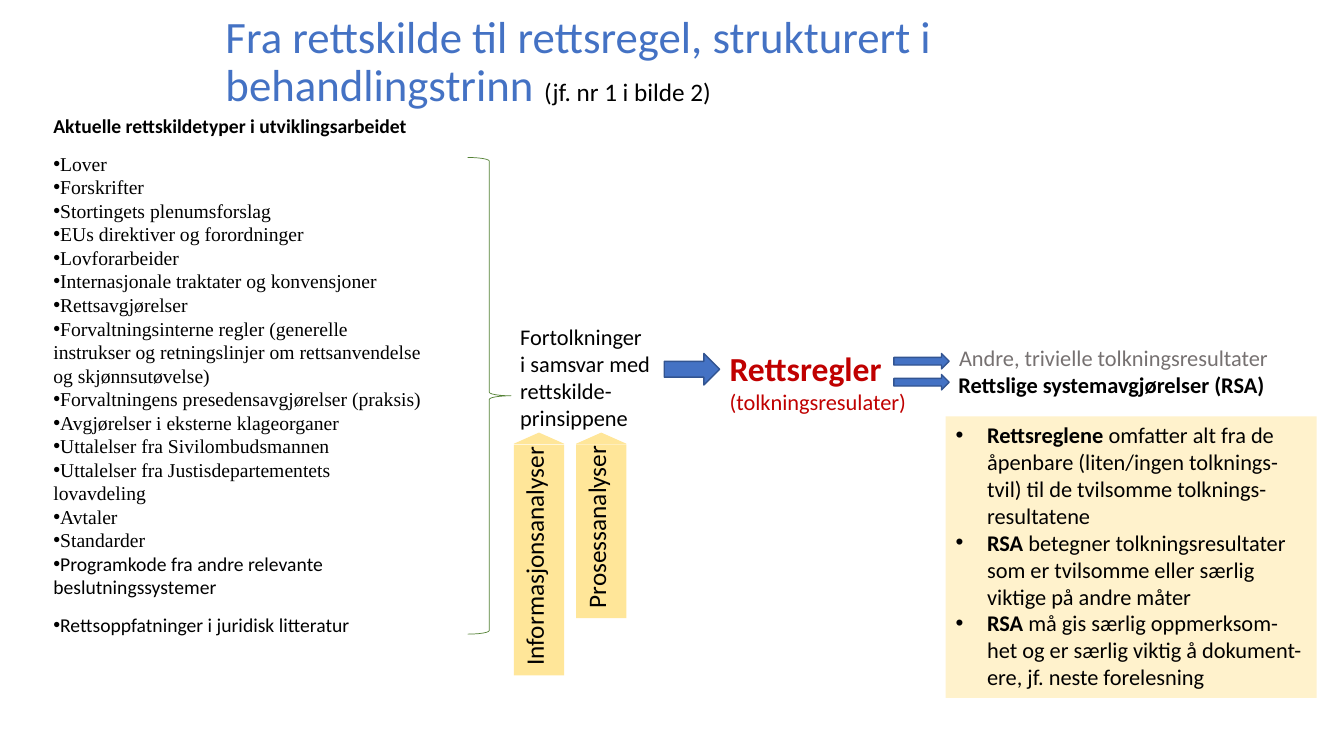
from copy import deepcopy

from lxml import etree
from pptx import Presentation
from pptx.dml.color import RGBColor
from pptx.enum.shapes import MSO_SHAPE
from pptx.enum.text import MSO_ANCHOR, MSO_AUTO_SIZE, PP_ALIGN
from pptx.oxml.ns import qn
from pptx.util import Pt

RECT = MSO_SHAPE.RECTANGLE
ARROW = MSO_SHAPE.RIGHT_ARROW
TRIANGLE = MSO_SHAPE.ISOSCELES_TRIANGLE
BRACE = MSO_SHAPE.RIGHT_BRACE
TOP, MIDDLE = MSO_ANCHOR.TOP, MSO_ANCHOR.MIDDLE
GROW, FIXED = MSO_AUTO_SIZE.SHAPE_TO_FIT_TEXT, MSO_AUTO_SIZE.NONE
LEFT = PP_ALIGN.LEFT

COLORS = {
    "black": "000000", "white": "FFFFFF", "blue": "4472C4", "navy": "325491",
    "green": "548235", "red": "C00000", "grey": "767171",
    "cream": "FFF2CC", "gold": "FFE699",
}
SANS, SERIF = "Calibri", "Times New Roman"

SOURCE_TYPES = [
    "Lover", "Forskrifter", "Stortingets plenumsforslag",
    "EUs direktiver og forordninger", "Lovforarbeider",
    "Internasjonale traktater og konvensjoner", "Rettsavgjørelser",
    "Forvaltningsinterne regler (generelle instrukser og retningslinjer "
    "om rettsanvendelse og skjønnsutøvelse)",
    "Forvaltningens presedensavgjørelser (praksis)",
    "Avgjørelser i eksterne klageorganer",
    "Uttalelser fra Sivilombudsmannen",
    "Uttalelser fra Justisdepartementets lovavdeling",
    "Avtaler", "Standarder",
]
OTHER_SOURCES = [
    "Programkode fra andre relevante beslutningssystemer",
    "Rettsoppfatninger i juridisk litteratur",
]
NOTES = [
    ("Rettsreglene", " omfatter alt fra de\nåpenbare (liten/ingen tolknings-\n"
                     "tvil) til de tvilsomme tolknings-\nresultatene"),
    ("RSA", " betegner tolkningsresultater\nsom er tvilsomme eller særlig\n"
            "viktige på andre måter"),
    ("RSA", " må gis særlig oppmerksom-\nhet og er særlig viktig å dokument-\n"
            "ere, jf. neste forelesning"),
]


def rgb(name):
    return RGBColor.from_string(COLORS[name])


class Slide:
    def __init__(self, prs):
        self.s = prs.slides.add_slide(prs.slide_layouts[6])

    def shape(self, kind, box, fill=None, line=None, weight=1):
        sp = self.s.shapes.add_shape(kind, *map(Pt, box))
        sp.shadow.inherit = False
        if fill:
            sp.fill.solid()
            sp.fill.fore_color.rgb = rgb(fill)
        else:
            sp.fill.background()
        if line:
            sp.line.color.rgb = rgb(line)
            sp.line.width = Pt(weight)
        else:
            sp.line.fill.background()
        return sp

    def arrow(self, box):
        return self.shape(ARROW, box, "blue", "navy")

    def frame(self, sp, wrap=False, anchor=TOP):
        tf = sp.text_frame
        tf.word_wrap = wrap
        tf.auto_size = FIXED if wrap else GROW
        tf.vertical_anchor = anchor
        return tf

    def textbox(self, box, wrap=False, anchor=TOP):
        return self.frame(self.s.shapes.add_textbox(*map(Pt, box)), wrap, anchor)

    def paragraph(self, tf, after=0, bullet=False, hang=0):
        """Return the empty first paragraph, or a new one."""
        first = tf.paragraphs[0]
        p = tf.add_paragraph() if first.runs else first
        p.alignment = LEFT
        p.space_after = Pt(after)
        if bullet:
            pPr = p._p.get_or_add_pPr()
            pPr.set("marL", str(Pt(hang)))
            pPr.set("indent", str(-Pt(hang)))
            etree.SubElement(pPr, qn("a:buFont")).set("typeface", "Arial")
            etree.SubElement(pPr, qn("a:buChar")).set("char", "•")
        return p

    def add_text(self, p, text, size, color="black", bold=False, font=SANS):
        """Add text to a paragraph; each newline becomes a line break."""
        for i, part in enumerate(text.split("\n")):
            if i:
                p.add_line_break()
                p._p[-1].append(deepcopy(r._r.rPr))
            r = p.add_run()
            r.text = part
            r.font.size = Pt(size)
            r.font.name = font
            r.font.bold = bold
            r.font.color.rgb = rgb(color)

    def label(self, box, lines):
        tf = self.textbox(box)
        for line in lines:
            self.add_text(self.paragraph(tf), *line)

    def analysis(self, left, height, text):
        """Upright bar with a roof and text that reads upwards."""
        tf = self.frame(self.shape(RECT, (left, 317.5, 36, height), "gold"))
        tf._txBody.bodyPr.set("vert", "vert270")
        self.add_text(self.paragraph(tf), text, 18)
        self.shape(TRIANGLE, (left, 309, 36, 8), "gold")


def main():
    prs = Presentation()
    prs.slide_width, prs.slide_height = Pt(960), Pt(540)
    s = Slide(prs)

    p = s.paragraph(s.textbox((154, 0, 648, 90), True, MIDDLE))
    p.line_spacing = 0.9
    s.add_text(p, "Fra rettskilde til rettsregel, strukturert i behandlingstrinn ",
               32, "blue")
    s.add_text(p, "(jf. nr 1 i bilde 2)", 18)

    sources = s.frame(s.shape(RECT, (31, 78, 281.5, 394.5), "white"), True)
    s.add_text(s.paragraph(sources, 10),
               "Aktuelle rettskildetyper i utviklingsarbeidet", 14, bold=True)
    for text in SOURCE_TYPES:
        s.add_text(s.paragraph(sources, bullet=True), text, 14, font=SERIF)
    for text in OTHER_SOURCES:
        s.add_text(s.paragraph(sources, 10, True), text, 14)

    s.shape(BRACE, (334, 112.5, 31, 340.5), line="green", weight=0.5)
    s.label((364.5, 227.5, 108, 85), [
        (text, 16) for text in
        ("Fortolkninger", "i samsvar med", "rettskilde-", "prinsippene")])
    s.arrow((474.5, 252.5, 39.5, 22.5))
    s.label((514, 245, 142.5, 55.5), [
        ("Rettsregler", 24, "red", True), ("(tolkningsresulater)", 16, "red")])

    notes = s.frame(s.shape(RECT, (675.5, 297.5, 265, 201), "cream"))
    for term, text in NOTES:
        p = s.paragraph(notes, bullet=True, hang=22.5)
        s.add_text(p, term, 16, bold=True)
        s.add_text(p, text, 16)

    s.analysis(411.5, 124, "Prosessanalyser")
    s.analysis(367, 165, "Informasjonsanalyser")

    for top in (252.5, 267.5):
        s.arrow((638.5, top, 39.5, 11))
    s.label((677.5, 261.5, 236, 26.5),
            [("Rettslige systemavgjørelser (RSA)", 16, "black", True)])
    s.label((678, 242.5, 238.5, 26.5),
            [("Andre, trivielle tolkningsresultater", 16, "grey")])

    prs.save("out.pptx")


if __name__ == "__main__":
    main()
